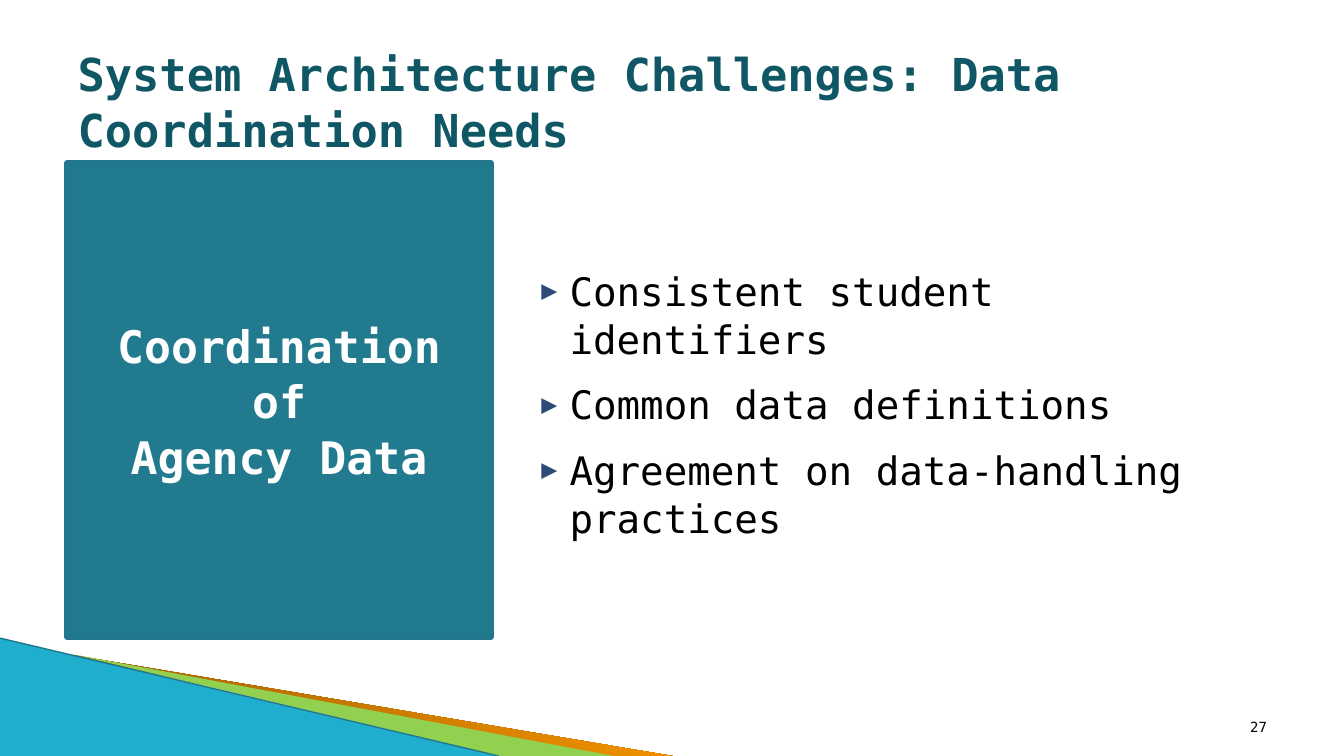
from dataclasses import dataclass

from lxml.etree import SubElement
from pptx import Presentation
from pptx.dml.color import RGBColor
from pptx.enum.shapes import MSO_CONNECTOR, MSO_SHAPE
from pptx.enum.text import MSO_ANCHOR, MSO_AUTO_SIZE, PP_ALIGN
from pptx.oxml.ns import qn
from pptx.util import Cm, Pt

FONT = "DejaVu Sans Mono"
WHITE = RGBColor(0xFF, 0xFF, 0xFF)
BLACK = RGBColor(0x00, 0x00, 0x00)
DEEP = RGBColor(0x10, 0x57, 0x66)
TEAL = RGBColor(0x22, 0x7A, 0x8F)
EDGE = RGBColor(0x21, 0x78, 0x8D)
SKY = RGBColor(0x1F, 0xAE, 0xCD)
GREEN = RGBColor(0x92, 0xD0, 0x50)
BROWN = RGBColor(0x97, 0x5B, 0x00)
ORANGE = RGBColor(0xFF, 0x99, 0x00)
NAVY = "2B4A76"


@dataclass
class Box:
    left: float
    top: float
    width: float
    height: float

    def lengths(self) -> tuple:
        return Cm(self.left), Cm(self.top), Cm(self.width), Cm(self.height)


@dataclass
class Wedge:
    points: list
    start: RGBColor
    end: RGBColor


WEDGES = [
    Wedge([(1.85, 16.51), (16.94, 19.05), (13.06, 19.05)], BROWN, ORANGE),
    Wedge([(1.8, 16.48), (15.47, 19.05), (12.6, 19.05)], GREEN, GREEN),
]


def place(shape, box: Box) -> None:
    shape.left, shape.top, shape.width, shape.height = box.lengths()


def add_mark(para) -> None:
    """Give a paragraph its arrow bullet and hanging indent."""
    props = para._p.get_or_add_pPr()
    props.set("marL", str(Cm(1.02)))
    props.set("indent", str(-Cm(0.71)))
    color = SubElement(props, qn("a:buClr"))
    SubElement(color, qn("a:srgbClr"), val=NAVY)
    SubElement(props, qn("a:buSzPct"), val="68000")
    SubElement(props, qn("a:buFont"), typeface=FONT)
    SubElement(props, qn("a:buChar"), char="▶")


def write(shape, *lines: str, size: float, color: RGBColor, bold: bool = False,
          align=PP_ALIGN.LEFT, anchor=MSO_ANCHOR.MIDDLE, gap: float = 0,
          marks: bool = False) -> None:
    frame = shape.text_frame
    frame.word_wrap = True
    frame.auto_size = MSO_AUTO_SIZE.NONE
    frame.vertical_anchor = anchor
    for i, line in enumerate(lines):
        para = frame.add_paragraph() if i else frame.paragraphs[0]
        para.alignment = align
        para.line_spacing = 1.03
        para.space_before = Pt(gap if i else 0)
        if marks:
            add_mark(para)
        run = para.add_run()
        run.text = line
        font = run.font
        font.name, font.size, font.bold = FONT, Pt(size), bold
        font.color.rgb = color


def add_wedge(shapes, wedge: Wedge) -> None:
    first, *rest = [(Cm(x), Cm(y)) for x, y in wedge.points]
    build = shapes.build_freeform(*first)
    build.add_line_segments(rest)
    shape = build.convert_to_shape()
    shape.shadow.inherit = False
    shape.line.fill.background()
    if wedge.start == wedge.end:
        shape.fill.solid()
        shape.fill.fore_color.rgb = wedge.start
        return
    shape.fill.gradient()
    shape.fill.gradient_angle = 45
    for stop, color in zip(shape.fill.gradient_stops, (wedge.start, wedge.end)):
        stop.color.rgb = color


def add_solid(shapes, kind, box: Box, color: RGBColor):
    shape = shapes.add_shape(kind, *box.lengths())
    shape.shadow.inherit = False
    shape.fill.solid()
    shape.fill.fore_color.rgb = color
    shape.line.fill.background()
    return shape


def main() -> None:
    deck = Presentation()
    deck.slide_width, deck.slide_height = Cm(33.87), Cm(19.05)
    slide = deck.slides.add_slide(deck.slide_layouts[1])
    shapes = slide.shapes

    # Corner decoration
    for wedge in WEDGES:
        add_wedge(shapes, wedge)
    add_solid(shapes, MSO_SHAPE.RIGHT_TRIANGLE, Box(0, 16.08, 12.57, 2.97), SKY)
    rim = shapes.add_connector(MSO_CONNECTOR.STRAIGHT, Cm(0), Cm(16.08),
                               Cm(12.57), Cm(19.05))
    rim.line.color.rgb = EDGE
    rim.line.width = Pt(1)
    SubElement(rim._element.spPr, qn("a:effectLst"))

    # Title
    title = shapes.title
    place(title, Box(1.7, 0.76, 30.48, 3.18))
    write(title, "System Architecture Challenges: Data Coordination Needs",
          size=32.4, color=DEEP, bold=True, anchor=MSO_ANCHOR.BOTTOM)
    title.text_frame.margin_bottom = 0

    # Topic block
    block = add_solid(shapes, MSO_SHAPE.RECTANGLE, Box(1.7, 4.11, 10.67, 11.94), TEAL)
    block.line.color.rgb = EDGE
    block.line.width = Pt(4.33)
    SubElement(block.line._get_or_add_ln(), qn("a:round"))
    write(block, "Coordination", "of", "Agency Data", size=32, color=WHITE,
          bold=True, align=PP_ALIGN.CENTER)

    # Needs list
    body = slide.placeholders[1]
    place(body, Box(13.08, 4.11, 19.1, 12.12))
    write(body, "Consistent student identifiers", "Common data definitions",
          "Agreement on data-handling practices", size=28, color=BLACK,
          gap=12, marks=True)

    # Page number
    page = shapes.add_textbox(*Box(29.92, 17.96, 2.26, 0.53).lengths())
    write(page, "27", size=10, color=BLACK, align=PP_ALIGN.RIGHT,
          anchor=MSO_ANCHOR.TOP)

    deck.save("out.pptx")


if __name__ == "__main__":
    main()
